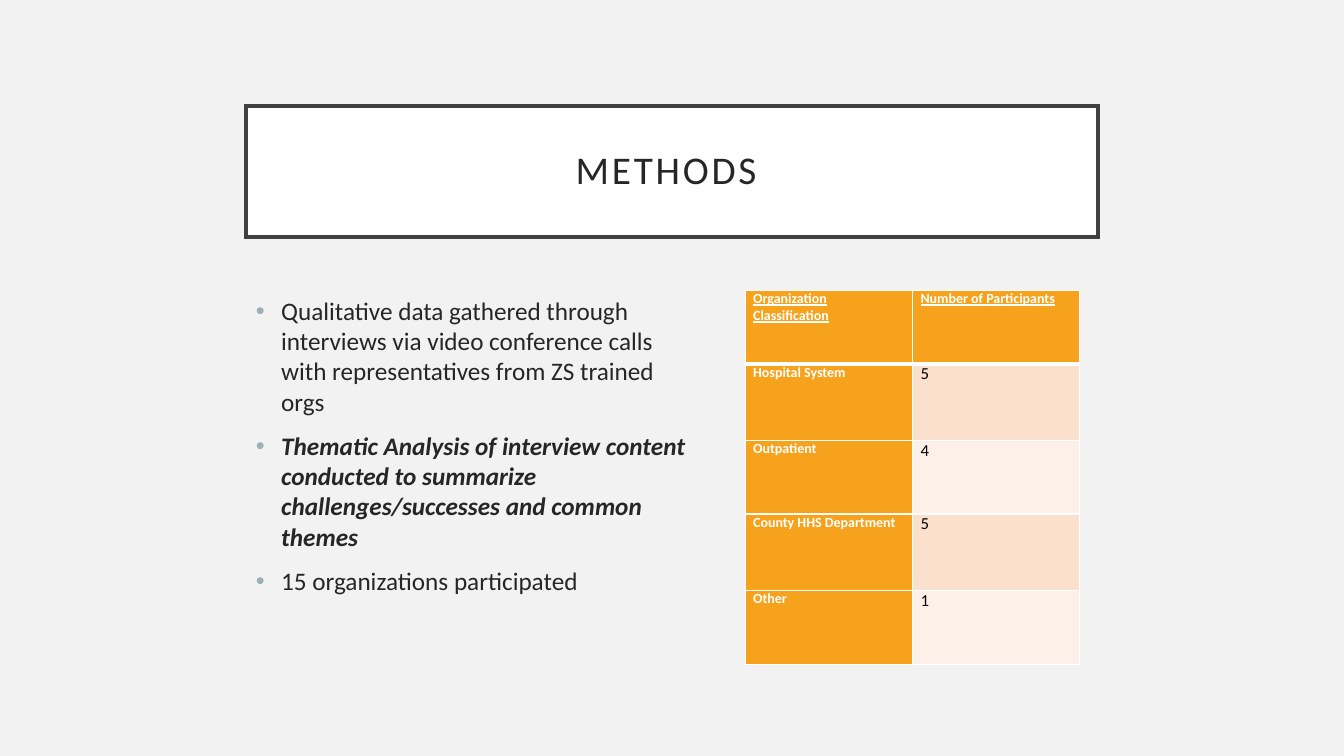
import pptx
import pptx.util
import pptx.dml.color
import pptx.enum.shapes
import pptx.enum.text
import pptx.oxml.ns
from lxml import etree

Inches = pptx.util.Inches
Pt = pptx.util.Pt
qn = pptx.oxml.ns.qn


def rgb(code):
    return pptx.dml.color.RGBColor.from_string(code)


def write(para, text, size=18, color="262626", bold=False, slant=False,
          under=False, track=0, face="Calibri"):
    run = para.add_run()
    run.text = text
    font = run.font
    font.name, font.size = face, Pt(size)
    font.bold, font.italic, font.underline = bold, slant, under
    font.color.rgb = rgb(color)
    if track:
        run._r.get_or_add_rPr().set("spc", str(track * 100))


def inset(part, side, top):
    part.margin_left = part.margin_right = Inches(side)
    part.margin_top = part.margin_bottom = Inches(top)


class Deck:
    ink, paper, amber = "262626", "F2F2F2", "F6A21D"
    dot, edge, white = "9BAFB5", "404040", "FFFFFF"
    bands = ("FBE0CD", "FDF0E8")

    def __init__(self):
        self.file = pptx.Presentation()
        self.file.slide_width = Inches(13.33)
        self.file.slide_height = Inches(7.5)
        self.slide = self.file.slides.add_slide(self.file.slide_layouts[6])
        back = self.slide.background.fill
        back.solid()
        back.fore_color.rgb = rgb(self.paper)

    def title(self, text, *box):
        shape = self.slide.shapes.add_shape(
            pptx.enum.shapes.MSO_SHAPE.RECTANGLE, *map(Inches, box))
        shape.shadow.inherit = False
        shape.fill.solid()
        shape.fill.fore_color.rgb = rgb(self.white)
        shape.line.color.rgb = rgb(self.edge)
        shape.line.width = Pt(2.5)
        # Square corners
        etree.SubElement(shape.line._get_or_add_ln(), qn("a:miter"),
                         lim="800000")
        frame = shape.text_frame
        frame.word_wrap = True
        inset(frame, 0.2, 0.2)
        frame.vertical_anchor = pptx.enum.text.MSO_ANCHOR.MIDDLE
        para = frame.paragraphs[0]
        para.alignment = pptx.enum.text.PP_ALIGN.CENTER
        para.line_spacing = 0.9
        write(para, text, size=28, color=self.ink, track=2)

    def bullets(self, items, *box):
        frame = self.slide.shapes.add_textbox(*map(Inches, box)).text_frame
        frame.word_wrap = True
        for i, (text, strong) in enumerate(items):
            para = frame.add_paragraph() if i else frame.paragraphs[0]
            para.space_before = Pt(10)
            para.line_spacing = 1.0
            props = para._p.get_or_add_pPr()
            props.set("marL", str(Inches(0.25)))
            props.set("indent", str(-Inches(0.25)))
            tint = etree.SubElement(props, qn("a:buClr"))
            etree.SubElement(tint, qn("a:srgbClr"), val=self.dot)
            etree.SubElement(props, qn("a:buFont"), typeface="Arial")
            etree.SubElement(props, qn("a:buChar"), char="•")
            write(para, text, color=self.ink, bold=strong, slant=strong)

    def border(self, cell, top, base):
        # Border lines come before the fill in the cell properties
        props = cell._tc.get_or_add_tcPr()
        sides = {"L": 1, "R": 1, "T": top, "B": base}
        for i, (side, width) in enumerate(sides.items()):
            line = etree.Element(qn(f"a:ln{side}"), w=str(Pt(width)))
            fill = etree.SubElement(line, qn("a:solidFill"))
            etree.SubElement(fill, qn("a:srgbClr"), val=self.white)
            props.insert(i, line)

    def table(self, rows, high, *box):
        grid = self.slide.shapes.add_table(
            len(rows), len(rows[0]), *map(Inches, box)).table
        for r, row in enumerate(rows):
            grid.rows[r].height = Inches(high[r])
            for c, text in enumerate(row):
                cell = grid.cell(r, c)
                inset(cell, 0.08, 0)
                head = r == 0 or c == 0
                cell.fill.solid()
                cell.fill.fore_color.rgb = rgb(
                    self.amber if head else self.bands[(r - 1) % 2])
                self.border(cell, 3 if r == 1 else 1, 3 if r == 0 else 1)
                write(cell.text_frame.paragraphs[0], text,
                      size=10 if head else 12,
                      color=self.white if head else "000000",
                      bold=head, under=r == 0)


def main():
    deck = Deck()
    # Heading
    deck.title("METHODS ", 2.44, 1.05, 8.45, 1.3)
    # Study steps
    deck.bullets([
        ("Qualitative data gathered through interviews via video conference "
         "calls with representatives from ZS trained orgs", False),
        ("Thematic Analysis of interview content conducted to summarize "
         "challenges/successes and common themes", True),
        ("15 organizations participated", False),
    ], 2.44, 2.88, 4.58, 3.39)
    # Participants by type
    deck.table([
        ("Organization Classification", "Number of Participants"),
        ("Hospital System", "5"),
        ("Outpatient", "4"),
        ("County HHS Department", "5"),
        ("Other", "1"),
    ], (0.73, 0.76, 0.73, 0.76, 0.73), 7.39, 2.88, 3.32, 3.7)
    deck.file.save("out.pptx")


if __name__ == "__main__":
    main()
